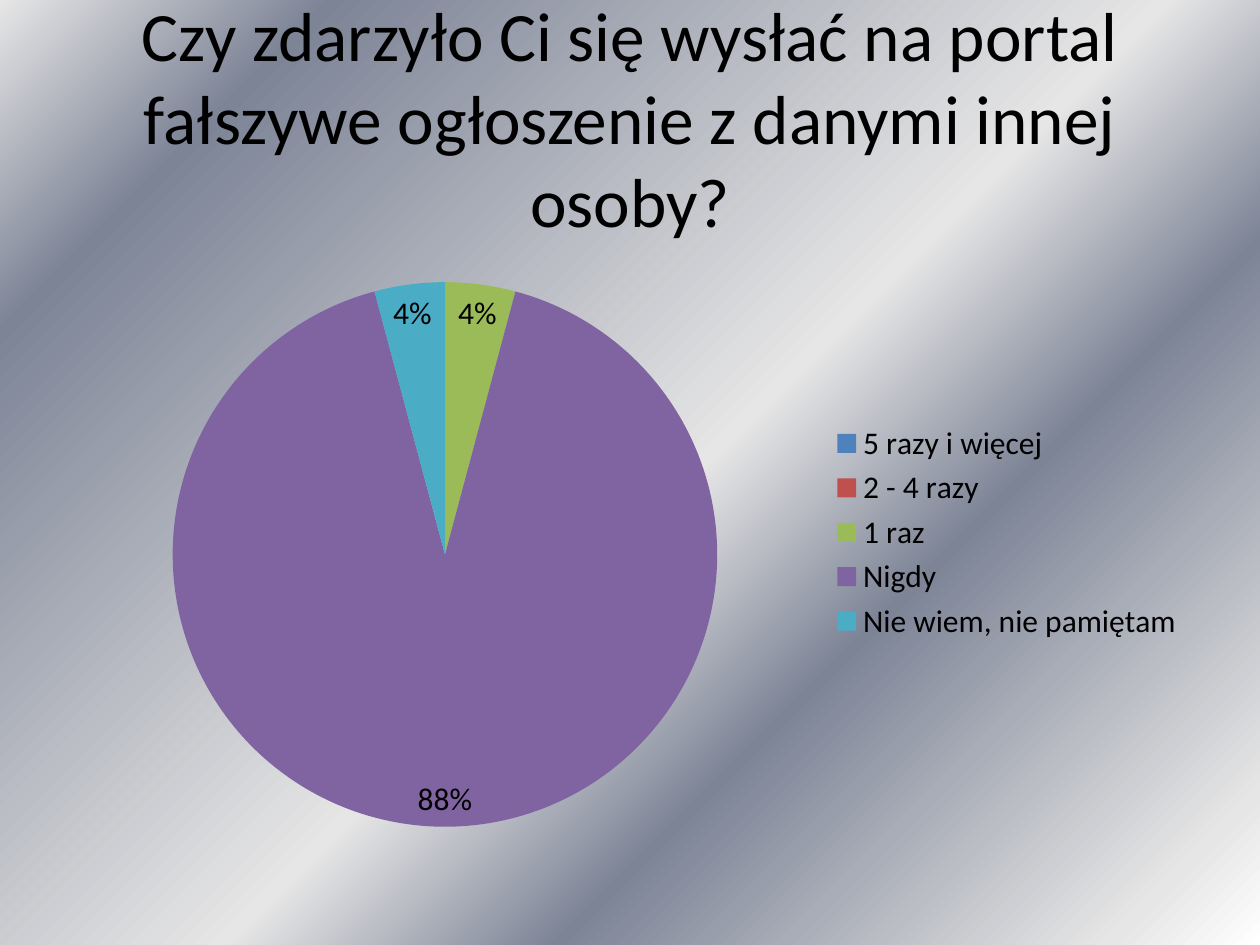
from lxml.etree import SubElement
from pptx import Presentation
from pptx.chart.data import CategoryChartData
from pptx.dml.color import RGBColor
from pptx.enum.chart import XL_CHART_TYPE, XL_LABEL_POSITION, XL_LEGEND_POSITION
from pptx.enum.text import MSO_ANCHOR, MSO_AUTO_SIZE, PP_ALIGN
from pptx.oxml import parse_xml
from pptx.oxml.ns import nsdecls, qn
from pptx.util import Inches, Pt

BLACK = RGBColor(0x00, 0x00, 0x00)
WHITE = RGBColor(0xFF, 0xFF, 0xFF)
SILVER = RGBColor(0xE6, 0xE6, 0xE6)
STEEL = RGBColor(0x7D, 0x84, 0x96)
BLUE = RGBColor(0x4F, 0x81, 0xBD)
RED = RGBColor(0xC0, 0x50, 0x4D)
GREEN = RGBColor(0x9B, 0xBB, 0x59)
PURPLE = RGBColor(0x80, 0x64, 0xA2)
TEAL = RGBColor(0x4B, 0xAC, 0xC6)

BACKGROUND_STOPS = [(0, WHITE), (7, SILVER), (32, STEEL), (47, SILVER), (85, STEEL), (100, SILVER)]
QUESTION = "Czy zdarzyło Ci się wysłać na portal fałszywe ogłoszenie z danymi innej osoby?"
ANSWERS = [
    ("5 razy i więcej", 0, BLUE),
    ("2 - 4 razy", 0, RED),
    ("1 raz", 0.04, GREEN),
    ("Nigdy", 0.88, PURPLE),
    ("Nie wiem, nie pamiętam", 0.04, TEAL),
]


class SurveySlide:
    font_name = "Calibri"
    title_size = Pt(39.6)
    chart_size = Pt(18)

    def __init__(self, deck):
        self.page = deck.slides.add_slide(deck.slide_layouts[5])

    def style(self, font, size):
        font.name = self.font_name
        font.size = size
        font.color.rgb = BLACK

    def background(self, stops, angle):
        fill = self.page.background.fill
        fill.gradient()
        fill.gradient_angle = angle
        stop_list = next(self.page.element.iter(qn("a:gsLst")))
        stop_list.clear()
        for percent, color in stops:
            stop = SubElement(stop_list, qn("a:gs"), pos=str(percent * 1000))
            SubElement(stop, qn("a:srgbClr"), val=str(color))

    def title(self, text, left, top, width, height):
        box = self.page.shapes.title
        box.left, box.top, box.width, box.height = left, top, width, height
        frame = box.text_frame
        frame.auto_size = MSO_AUTO_SIZE.NONE
        frame.word_wrap = True
        frame.vertical_anchor = MSO_ANCHOR.MIDDLE
        para = frame.paragraphs[0]
        para.alignment = PP_ALIGN.CENTER
        span = para.add_run()
        span.text = text
        self.style(span.font, self.title_size)

    def pie(self, answers, left, top, width, height):
        names, shares, colors = zip(*answers)
        data = CategoryChartData(number_format="0%")
        data.categories = names
        data.add_series("Series 1", shares)
        chart = self.page.shapes.add_chart(
            XL_CHART_TYPE.PIE, left, top, width, height, data
        ).chart
        self.style(chart.font, self.chart_size)
        chart.has_title = False
        chart.has_legend = True
        chart.legend.position = XL_LEGEND_POSITION.RIGHT
        chart.legend.include_in_layout = False
        plot = chart.plots[0]
        plot.vary_by_categories = True
        series = plot.series[0]
        for index, color in enumerate(colors):
            fill = series.points[index].format.fill
            fill.solid()
            fill.fore_color.rgb = color
        self.labels(series, shares)

    def labels(self, series, shares):
        labels = series.data_labels
        labels.show_value = True
        labels.number_format = "0%"
        labels.number_format_is_linked = False
        labels.position = XL_LABEL_POSITION.BEST_FIT
        self.style(labels.font, self.chart_size)
        label_list = series._element.find(qn("c:dLbls"))
        empty = [index for index, share in enumerate(shares) if share == 0]
        for place, index in enumerate(empty):
            label_list.insert(place, parse_xml(
                f'<c:dLbl {nsdecls("c")}><c:idx val="{index}"/><c:delete val="1"/></c:dLbl>'
            ))


def main():
    deck = Presentation()
    deck.slide_width = Inches(10)
    deck.slide_height = Inches(7.5)
    slide = SurveySlide(deck)
    slide.background(BACKGROUND_STOPS, 135)
    slide.title(QUESTION, Inches(0.5), Inches(0.3), Inches(9), Inches(1.25))
    slide.pie(ANSWERS, Inches(0.5), Inches(1.75), Inches(9), Inches(4.95))
    deck.save("out.pptx")


if __name__ == "__main__":
    main()
